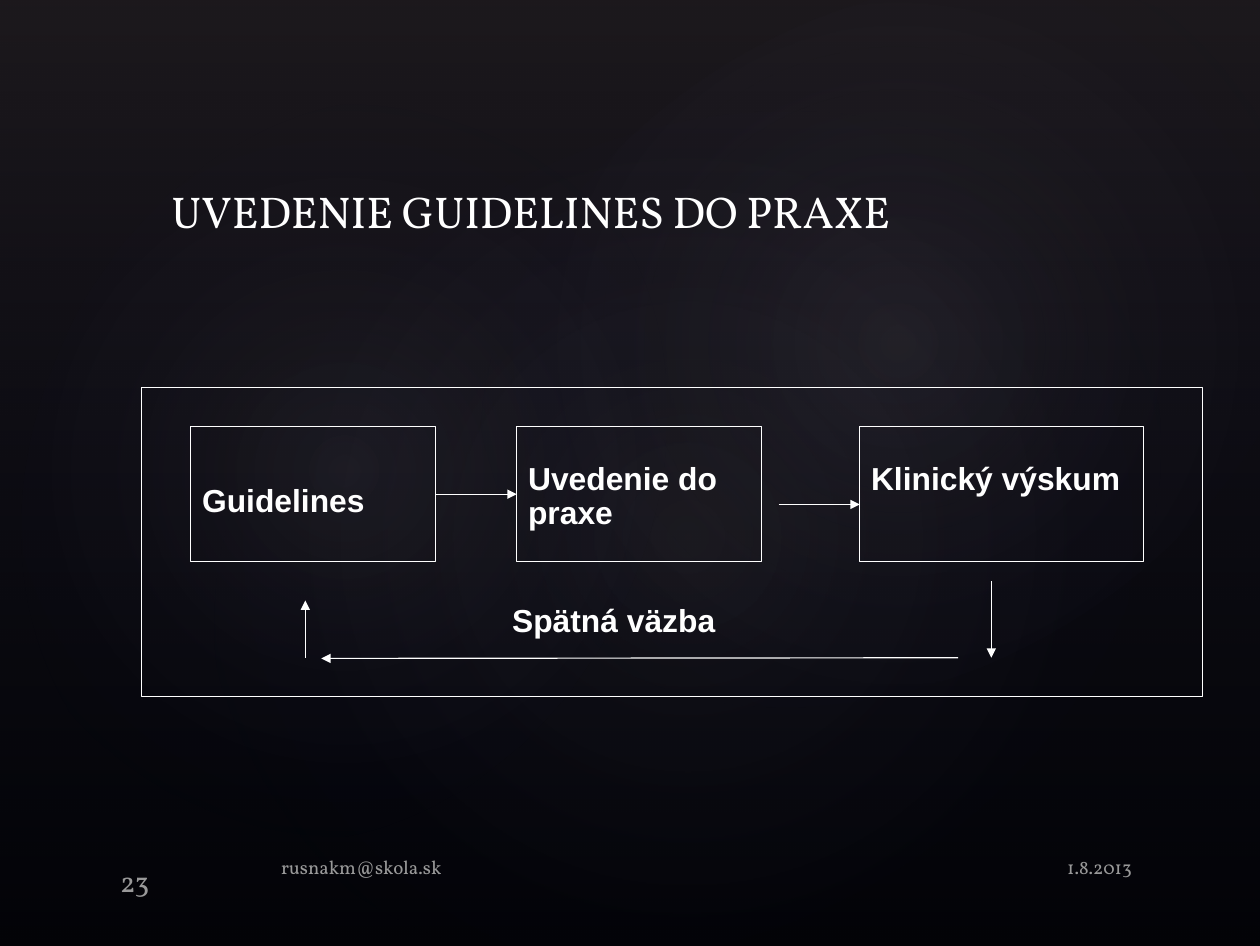
from lxml import etree
from pptx import Presentation
from pptx.dml.color import RGBColor
from pptx.enum.shapes import MSO_CONNECTOR, MSO_SHAPE
from pptx.enum.text import MSO_ANCHOR, MSO_AUTO_SIZE, PP_ALIGN
from pptx.oxml import parse_xml
from pptx.oxml.ns import qn
from pptx.util import Inches, Pt

RECTANGLE, OVAL = MSO_SHAPE.RECTANGLE, MSO_SHAPE.OVAL
STRAIGHT = MSO_CONNECTOR.STRAIGHT
LEFT, RIGHT = PP_ALIGN.LEFT, PP_ALIGN.RIGHT
TOP, MIDDLE, BOTTOM = MSO_ANCHOR.TOP, MSO_ANCHOR.MIDDLE, MSO_ANCHOR.BOTTOM
BLACK = RGBColor(0x00, 0x00, 0x00)
WHITE = RGBColor(0xFF, 0xFF, 0xFF)
GREY = RGBColor(0x99, 0x99, 0x99)
DUSK = RGBColor(0x50, 0x46, 0x52)
NAVY = RGBColor(0x24, 0x28, 0x52)
MIST = RGBColor(0xC4, 0xBC, 0xC6)
SERIF, SANS = "Vollkorn", "Arial"
DRAWING = "http://schemas.openxmlformats.org/drawingml/2006/main"
LINEAR = '<a:lin ang="5400000" scaled="0"/>'
RADIAL = '<a:path path="circle"><a:fillToRect l="50000" t="50000" r="50000" b="50000"/></a:path>'

deck = Presentation()
deck.slide_width, deck.slide_height = Inches(11.02), Inches(8.27)
page = deck.slides.add_slide(deck.slide_layouts[5])
shapes = page.shapes


def place(*shares):
    """Turn percentages of the slide's width and height, in turn, into lengths."""
    sides = (deck.slide_width, deck.slide_height) * 2
    return [round(side * share / 100) for side, share in zip(sides, shares)]


def write(box, text, font, size, color, align=LEFT, anchor=TOP, insets=(0.1, 0.05, 0.1, 0.05)):
    frame = box.text_frame
    frame.text = text
    frame.word_wrap = True
    frame.auto_size = MSO_AUTO_SIZE.NONE
    frame.vertical_anchor = anchor
    (frame.margin_left, frame.margin_top,
     frame.margin_right, frame.margin_bottom) = [Inches(inset) for inset in insets]
    para = frame.paragraphs[0]
    para.alignment = align
    span = para.runs[0]
    span.font.name, span.font.size = font, Pt(size)
    span.font.color.rgb = color
    if font == SANS:
        span.font.bold = True
        para.line_spacing = 0.87
    return para


# Black background with a soft wash and three glows
page.background.fill.solid()
page.background.fill.fore_color.rgb = BLACK
wash = [(0, DUSK, 36), (100, NAVY, 10)]
for kind, shares, turn, stops, direction in [
    (RECTANGLE, (0, 0, 100, 100), 0, wash, LINEAR),
    (OVAL, (14.97, 15.11, 79.22, 83.19), 328.7, [(0, MIST, 7), (58, NAVY, 0)], RADIAL),
    (OVAL, (-2.99, 17.05, 60.62, 65.3), 294.3, [(0, MIST, 8), (58, NAVY, 0)], RADIAL),
    (OVAL, (35.84, 1.69, 70.87, 69.29), 328.7, [(0, MIST, 8), (58, NAVY, 0)], RADIAL),
]:
    glow = shapes.add_shape(kind, *place(*shares))
    glow.rotation = turn
    glow.shadow.inherit = False
    glow.line.fill.background()
    glow.fill.background()
    stop_list = "".join(
        f'<a:gs pos="{at * 1000}"><a:srgbClr val="{color}">'
        f'<a:alpha val="{alpha * 1000}"/></a:srgbClr></a:gs>'
        for at, color, alpha in stops)
    gradient = parse_xml(f'<a:gradFill xmlns:a="{DRAWING}" rotWithShape="1">'
                         f'<a:gsLst>{stop_list}</a:gsLst>{direction}</a:gradFill>')
    properties = glow.element.spPr
    properties.replace(properties.find(qn("a:noFill")), gradient)

# Title, brought in front of the backdrop
title = shapes.title
title.left, title.top, title.width, title.height = place(12.43, 12.82, 66.7, 18.86)
heading = write(title, "UVEDENIE GUIDELINES DO PRAXE", SERIF, 28, WHITE,
                anchor=MIDDLE, insets=(0.13, 0.06, 0.11, 0.06))
heading.space_before = Pt(5.6)
title.element.getparent().append(title.element)

# Footer: date, page number, address
for left, width, text, size, align, anchor, bottom in [
    (79.31, 11.52, "1.8.2013", 12, RIGHT, TOP, 0.06),
    (8.53, 8.17, "23", 18, LEFT, BOTTOM, 0.01),
    (21.32, 54.36, "rusnakm@skola.sk", 12, LEFT, TOP, 0.06),
]:
    footer = shapes.add_textbox(*place(left, 89.72, width, 5.32))
    write(footer, text, SERIF, size, GREY, align, anchor, (0.11, 0.06, 0.11, bottom))

# Frame and the three steps
for left, top, width, height, text, drop in [
    (11.25, 41, 84.21, 32.65, "", 0),
    (15.15, 45.1, 19.42, 14.27, "Guidelines", 0.52),
    (41.02, 45.1, 19.42, 14.27, "Uvedenie do praxe", 0.33),
    (68.24, 45.1, 22.5, 14.27, "Klinický výskum", 0.33),
]:
    step = shapes.add_shape(RECTANGLE, *place(left, top, width, height))
    step.shadow.inherit = False
    step.fill.background()
    step.line.color.rgb, step.line.width = WHITE, Pt(0.75)
    if text:
        write(step, text, SANS, 20, WHITE, insets=(0.1, drop, 0.1, 0.05))

# Arrows of the loop
for ends in [
    (34.57, 52.24, 41.02, 52.24),
    (61.8, 53.33, 68.24, 53.33),
    (78.68, 61.43, 78.68, 69.53),
    (76.04, 69.53, 25.5, 69.6),
    (24.23, 69.53, 24.23, 63.48),
]:
    arrow = shapes.add_connector(STRAIGHT, *place(*ends))
    arrow.line.color.rgb, arrow.line.width = WHITE, Pt(0.75)
    etree.SubElement(arrow.line._get_or_add_ln(), qn("a:tailEnd"), type="triangle")
    etree.SubElement(arrow.element.spPr, qn("a:effectLst"))

# Feedback label
feedback = shapes.add_textbox(*place(39.75, 63.48, 20.69, 6.17))
write(feedback, "Spätná väzba", SANS, 20, WHITE)

deck.save("out.pptx")
